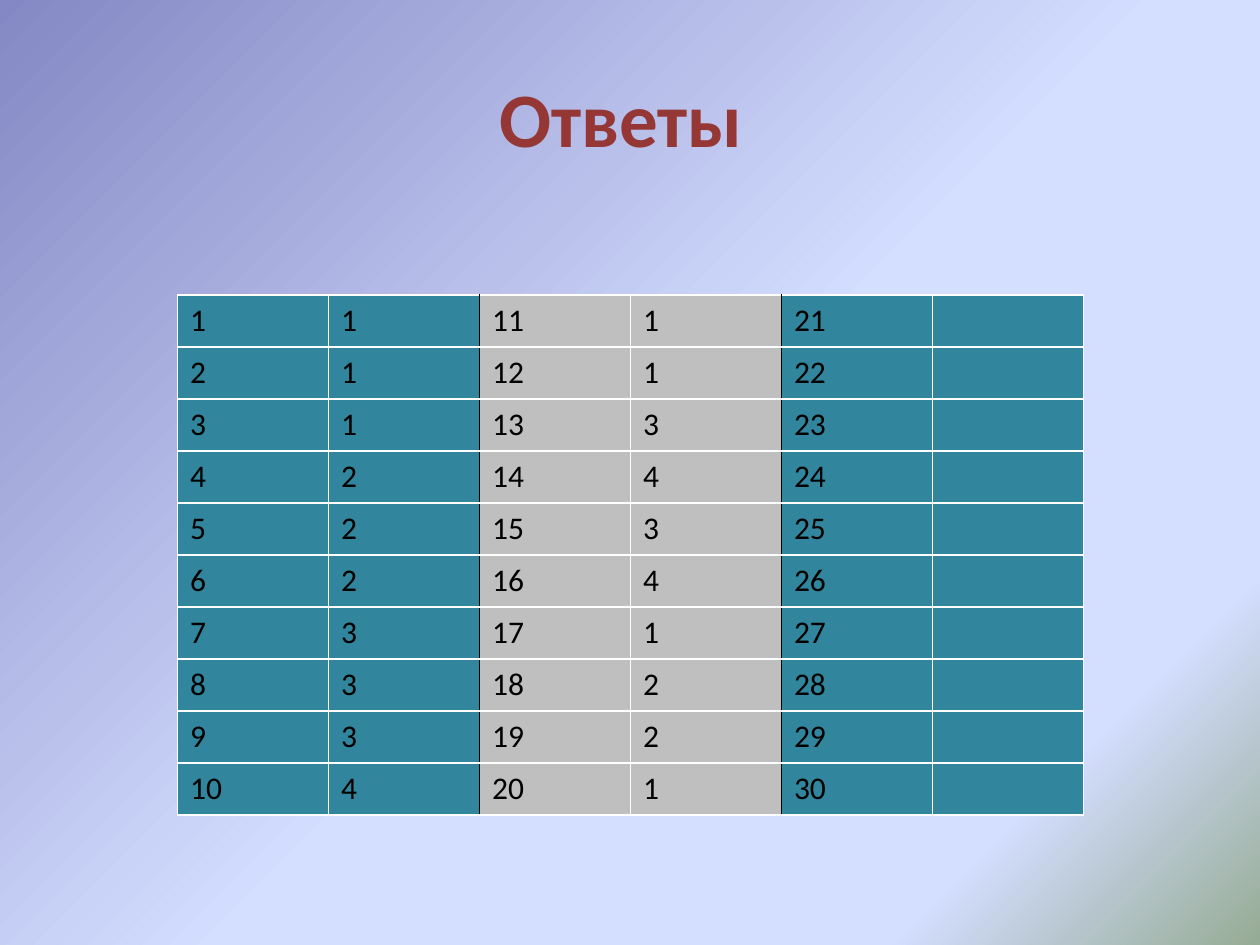
from lxml import etree
from pptx import Presentation
from pptx.dml.color import RGBColor
from pptx.enum.text import MSO_ANCHOR, PP_ALIGN
from pptx.oxml.ns import qn
from pptx.util import Inches, Pt

MIDDLE = MSO_ANCHOR.MIDDLE
CENTER = PP_ALIGN.CENTER

TEAL, GREY = "31859C", "BFBFBF"
WHITE, BLACK, RED = "FFFFFF", "000000", "953735"
BACKGROUND_STOPS = [(0, "8488C4"), (53, "D4DEFF"), (83, "D4DEFF"), (100, "96AB94")]

ROWS = 10
GROUP_FILLS = [TEAL, GREY, TEAL]
ANSWERS = ["1112223334", "1134341221", ""]


def color(hex_value):
    return RGBColor.from_string(hex_value)


class SlideBuilder:
    font_name = "Calibri"
    border_width = Pt(1)

    def __init__(self, slide):
        self.slide = slide

    def background(self, stops, angle):
        fill = self.slide.background.fill
        fill.gradient()
        fill.gradient_angle = 360 - angle
        stop_list = next(self.slide.background._cSld.iter(qn("a:gsLst")))
        for stop in list(stop_list):
            stop_list.remove(stop)
        for position, hex_value in stops:
            stop = etree.SubElement(stop_list, qn("a:gs"), pos=str(position * 1000))
            etree.SubElement(stop, qn("a:srgbClr"), val=hex_value)

    def add_run(self, paragraph, text, size, hex_value, bold=False):
        run = paragraph.add_run()
        run.text = text
        run.font.name = self.font_name
        run.font.size = Pt(size)
        run.font.bold = bold
        run.font.color.rgb = color(hex_value)

    def title(self, text, left, top, width, height):
        box = self.slide.shapes.add_textbox(
            Inches(left), Inches(top), Inches(width), Inches(height))
        frame = box.text_frame
        frame.word_wrap = True
        frame.vertical_anchor = MIDDLE
        paragraph = frame.paragraphs[0]
        paragraph.alignment = CENTER
        self.add_run(paragraph, text, 44, RED, bold=True)

    def table(self, rows, columns, left, top, width, height):
        frame = self.slide.shapes.add_table(
            rows, columns, Inches(left), Inches(top), Inches(width), Inches(height))
        frame.table.first_row = False
        frame.table.horz_banding = False
        return frame.table

    def cell(self, cell, text, fill, left_border, right_border):
        properties = cell._tc.get_or_add_tcPr()
        borders = {"L": left_border, "R": right_border, "T": WHITE, "B": WHITE}
        for side, hex_value in borders.items():
            line = etree.SubElement(
                properties, qn(f"a:ln{side}"), w=str(self.border_width))
            line_fill = etree.SubElement(line, qn("a:solidFill"))
            etree.SubElement(line_fill, qn("a:srgbClr"), val=hex_value)
        cell.fill.solid()
        cell.fill.fore_color.rgb = color(fill)
        if text:
            self.add_run(cell.text_frame.paragraphs[0], text, 18, BLACK)


def main():
    presentation = Presentation()
    presentation.slide_width = Inches(10)
    presentation.slide_height = Inches(7.5)
    blank_layout = presentation.slide_layouts[6]
    builder = SlideBuilder(presentation.slides.add_slide(blank_layout))

    # Background and title
    builder.background(BACKGROUND_STOPS, angle=45)
    builder.title("Ответы ", 0.5, 0.3, 9, 1.25)

    # Answer table: each group is a question column and an answer column,
    # with a black line between groups
    groups = len(GROUP_FILLS)
    table = builder.table(ROWS, 2 * groups, 1.41, 2.34, 7.19, 4.13)
    for group, (fill, answers) in enumerate(zip(GROUP_FILLS, ANSWERS)):
        left_border = BLACK if group > 0 else WHITE
        right_border = BLACK if group < groups - 1 else WHITE
        for row in range(ROWS):
            question = str(group * ROWS + row + 1)
            answer = answers[row:row + 1]
            builder.cell(table.cell(row, 2 * group), question, fill, left_border, WHITE)
            builder.cell(table.cell(row, 2 * group + 1), answer, fill, WHITE, right_border)

    presentation.save("out.pptx")


if __name__ == "__main__":
    main()
